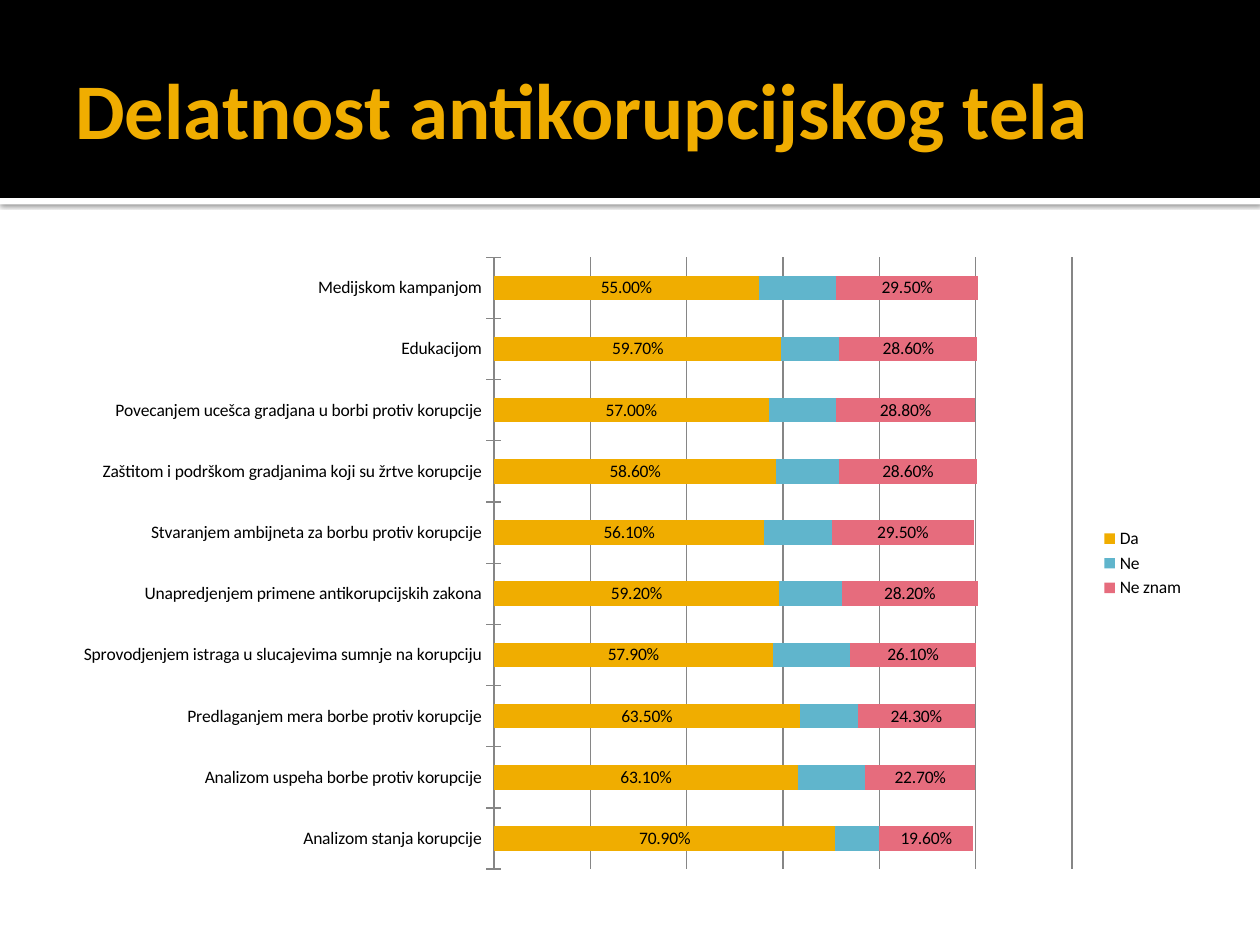
"""Build a slide with a stacked bar chart on the activity of an anti-corruption body."""
from dataclasses import dataclass

from lxml import etree
from pptx import Presentation
from pptx.chart.data import CategoryChartData
from pptx.dml.color import RGBColor
from pptx.enum.chart import XL_CHART_TYPE, XL_LEGEND_POSITION, XL_TICK_LABEL_POSITION, XL_TICK_MARK
from pptx.enum.shapes import MSO_SHAPE
from pptx.enum.text import MSO_ANCHOR
from pptx.oxml import parse_xml
from pptx.oxml.ns import nsdecls, qn
from pptx.util import Cm, Pt

BAR_STACKED = XL_CHART_TYPE.BAR_STACKED
LEGEND_RIGHT = XL_LEGEND_POSITION.RIGHT
LABELS_LOW = XL_TICK_LABEL_POSITION.LOW
TICK_CROSS = XL_TICK_MARK.CROSS
RECTANGLE = MSO_SHAPE.RECTANGLE
MIDDLE = MSO_ANCHOR.MIDDLE

COLORS = {
    "black": "000000",
    "white": "FFFFFF",
    "gold": "F0AD00",
    "blue": "60B5CC",
    "rose": "E66C7D",
    "gray": "868686",
}
FONT = "Calibri"
PERCENT = "0.00%"


@dataclass
class Band:
    top: float
    height: float
    color: str
    shadowed: bool = False


@dataclass
class Answer:
    name: str
    shares: tuple[float, ...]
    color: str
    labelled: bool = True


BANDS = [
    Band(3.99, 0.13, "white", shadowed=True),
    Band(0, 3.99, "black"),
]
ACTIVITIES = [
    "Analizom stanja korupcije",
    "Analizom uspeha borbe protiv korupcije",
    "Predlaganjem mera borbe protiv korupcije",
    "Sprovodjenjem istraga u slucajevima sumnje na korupciju",
    "Unapredjenjem primene antikorupcijskih zakona",
    "Stvaranjem ambijneta za borbu protiv korupcije",
    "Zaštitom i podrškom gradjanima koji su žrtve korupcije",
    "Povecanjem ucešca gradjana u borbi protiv korupcije",
    "Edukacijom",
    "Medijskom kampanjom",
]
ANSWERS = [
    Answer("Da", (0.709, 0.631, 0.635, 0.579, 0.592, 0.561, 0.586, 0.57, 0.597, 0.55), "gold"),
    Answer("Ne", (0.09, 0.14, 0.12, 0.16, 0.13, 0.14, 0.13, 0.14, 0.12, 0.16), "blue", labelled=False),
    Answer("Ne znam", (0.196, 0.227, 0.243, 0.261, 0.282, 0.295, 0.286, 0.288, 0.286, 0.295), "rose"),
]
PLOT_AREA = {"x": 0.38, "y": 0.02, "w": 0.51, "h": 0.96}


def rgb(color: str) -> RGBColor:
    """Return the named colour."""
    return RGBColor.from_string(COLORS[color])


def style_font(font, size: float, color: str, bold: bool = False) -> None:
    """Set the typeface, size, colour and weight of a font."""
    font.name, font.size, font.bold = FONT, Pt(size), bold
    font.color.rgb = rgb(color)


def add_band(slide, band: Band) -> None:
    """Draw a full-width header band."""
    strip = slide.shapes.add_shape(RECTANGLE, 0, Cm(band.top), Cm(25.4), Cm(band.height))
    strip.fill.solid()
    strip.fill.fore_color.rgb = rgb(band.color)
    strip.line.fill.background()
    strip.shadow.inherit = False
    if band.shadowed:
        effects = strip._element.spPr.find(qn("a:effectLst"))
        effects.append(parse_xml(
            f'<a:outerShdw {nsdecls("a")} blurRad="{Pt(2.5)}" dist="{Pt(0.8)}" dir="5400000">'
            f'<a:srgbClr val="{COLORS["black"]}"><a:alpha val="60000"/></a:srgbClr></a:outerShdw>'))


def add_title(slide, wording: str) -> None:
    """Write the slide title over the header."""
    title = slide.shapes.add_textbox(Cm(1.27), Cm(0.43), Cm(22.86), Cm(3.48))
    frame = title.text_frame
    frame.word_wrap = True
    frame.vertical_anchor = MIDDLE
    frame.margin_left = Cm(0.25)
    frame.margin_right = frame.margin_top = frame.margin_bottom = Cm(0.13)
    heading = frame.paragraphs[0]
    heading.text = wording
    style_font(heading.font, 45, "gold", bold=True)


def fix_plot_area(chart) -> None:
    """Place the inner plot area by fractions of the chart."""
    plot_area = chart._chartSpace.chart.plotArea
    for old_layout in plot_area.findall(qn("c:layout")):
        plot_area.remove(old_layout)
    layout = etree.Element(qn("c:layout"))
    manual = etree.SubElement(layout, qn("c:manualLayout"))
    settings = {"layoutTarget": "inner", "xMode": "edge", "yMode": "edge", **PLOT_AREA}
    for tag, setting in settings.items():
        etree.SubElement(manual, qn(f"c:{tag}")).set("val", str(setting))
    plot_area.insert(0, layout)


def style_series(series, answer: Answer) -> None:
    """Colour one answer and label its shares."""
    series.format.fill.solid()
    series.format.fill.fore_color.rgb = rgb(answer.color)
    if answer.labelled:
        labels = series.data_labels
        labels.show_value = True
        labels.number_format = PERCENT
        labels.number_format_is_linked = False
        style_font(labels.font, 10, "black")


def add_answer_chart(slide, answers: list[Answer]) -> None:
    """Draw the stacked bars of answers by activity."""
    survey = CategoryChartData(number_format=PERCENT)
    survey.categories = ACTIVITIES
    for answer in answers:
        survey.add_series(answer.name, answer.shares)
    chart = slide.shapes.add_chart(
        BAR_STACKED, Cm(1.27), Cm(4.93), Cm(22.86), Cm(12.85), survey).chart
    style_font(chart.font, 10, "black")
    chart.has_title = False
    chart.has_legend = True
    chart.legend.position = LEGEND_RIGHT
    chart.legend.include_in_layout = False

    plot = chart.plots[0]
    plot.gap_width, plot.overlap = 150, 100
    plot.vary_by_categories = False
    for series, answer in zip(plot.series, answers):
        style_series(series, answer)

    activity_axis, share_axis = chart.category_axis, chart.value_axis
    activity_axis.major_tick_mark = TICK_CROSS
    activity_axis.tick_label_position = LABELS_LOW
    share_axis.minimum_scale, share_axis.maximum_scale, share_axis.major_unit = 0, 1.2, 0.2
    share_axis.has_major_gridlines = True
    share_axis.tick_labels.number_format = PERCENT
    share_axis.tick_labels.number_format_is_linked = False
    share_axis.visible = False
    for line in (activity_axis.format.line, share_axis.major_gridlines.format.line):
        line.color.rgb = rgb("gray")
        line.width = Pt(0.75)
    fix_plot_area(chart)


def main() -> None:
    """Build and save the presentation."""
    presentation = Presentation()
    presentation.slide_width, presentation.slide_height = Cm(25.4), Cm(19.05)
    slide = presentation.slides.add_slide(presentation.slide_layouts[6])
    for band in BANDS:
        add_band(slide, band)
    add_title(slide, "Delatnost antikorupcijskog tela")
    add_answer_chart(slide, ANSWERS)
    presentation.save("out.pptx")


if __name__ == "__main__":
    main()
